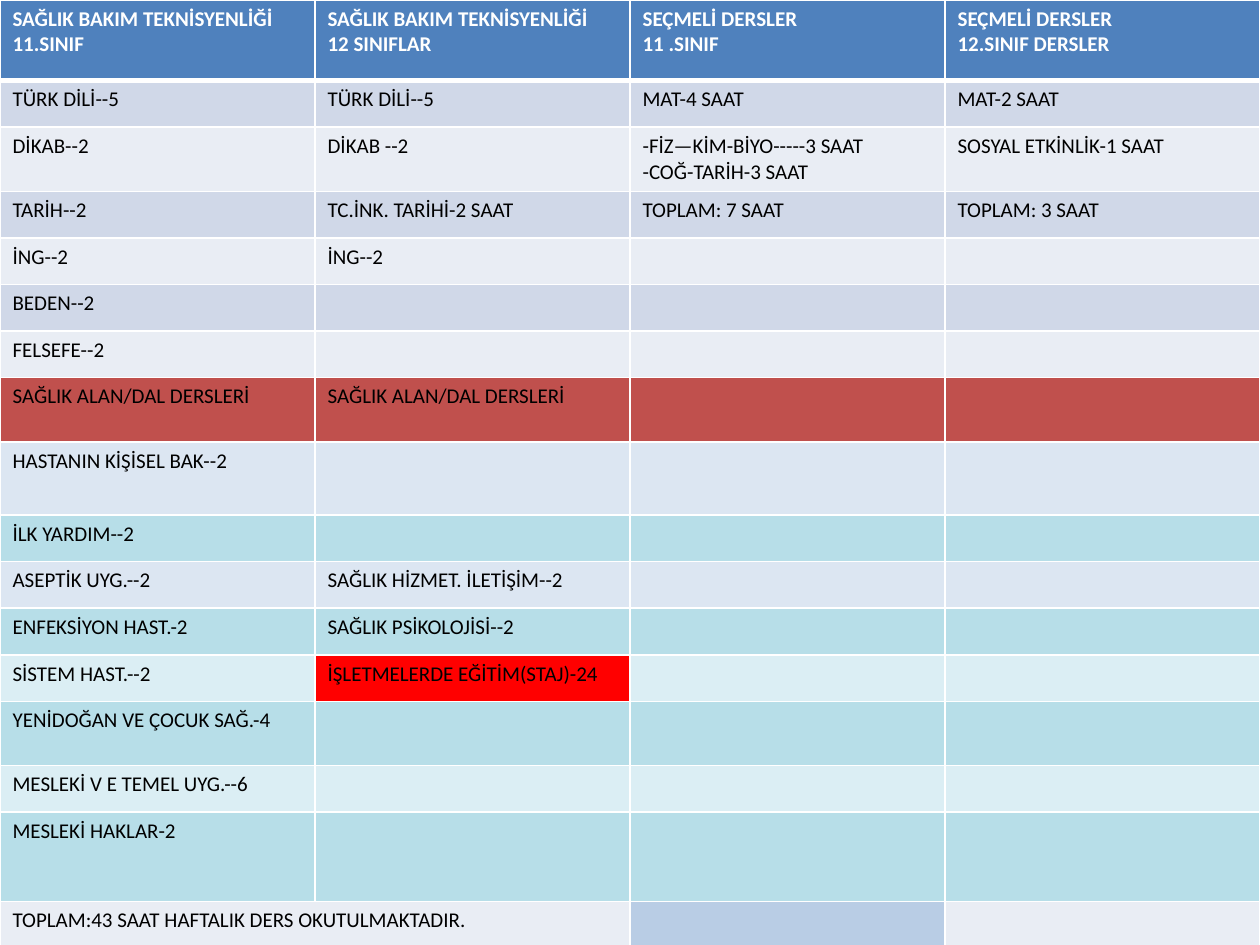
from lxml.etree import SubElement
from pptx import Presentation
from pptx.dml.color import RGBColor
from pptx.oxml.ns import qn
from pptx.util import Inches, Pt

COLORS = {
    "header": "4F81BD", "band": "D0D8E8", "light": "E9EDF4", "section": "C0504D",
    "pale": "DCE6F2", "aqua": "B7DEE8", "pale_aqua": "DBEEF4", "staj": "FF0000",
    "total": "B9CDE5", "white": "FFFFFF", "black": "000000",
}
FONT, SIZE = "Calibri", 12
COLUMNS = 4

# Row height, row fill, texts from the left (missing ones are empty)
ROWS = [
    (0.64, "header", ["SAĞLIK BAKIM TEKNİSYENLİĞİ\n11.SINIF",
                      "SAĞLIK BAKIM TEKNİSYENLİĞİ\n12 SINIFLAR",
                      "SEÇMELİ DERSLER\n11 .SINIF",
                      "SEÇMELİ DERSLER\n12.SINIF DERSLER"]),
    (0.37, "band", ["TÜRK DİLİ--5", "TÜRK DİLİ--5", "MAT-4 SAAT", "MAT-2 SAAT"]),
    (0.51, "light", ["DİKAB--2", "DİKAB --2",
                     "-FİZ—KİM-BİYO-----3 SAAT\n-COĞ-TARİH-3 SAAT",
                     "SOSYAL ETKİNLİK-1 SAAT"]),
    (0.37, "band", ["TARİH--2", "TC.İNK. TARİHİ-2 SAAT",
                    "TOPLAM: 7 SAAT", "TOPLAM: 3 SAAT"]),
    (0.37, "light", ["İNG--2", "İNG--2"]),
    (0.37, "band", ["BEDEN--2"]),
    (0.37, "light", ["FELSEFE--2"]),
    (0.51, "section", ["SAĞLIK ALAN/DAL DERSLERİ", "SAĞLIK ALAN/DAL DERSLERİ"]),
    (0.58, "pale", ["HASTANIN KİŞİSEL BAK--2"]),
    (0.37, "aqua", ["İLK YARDIM--2"]),
    (0.37, "pale", ["ASEPTİK UYG.--2", "SAĞLIK HİZMET. İLETİŞİM--2"]),
    (0.37, "aqua", ["ENFEKSİYON HAST.-2", "SAĞLIK PSİKOLOJİSİ--2"]),
    (0.37, "pale_aqua", ["SİSTEM HAST.--2", "İŞLETMELERDE EĞİTİM(STAJ)-24"]),
    (0.51, "aqua", ["YENİDOĞAN VE ÇOCUK SAĞ.-4"]),
    (0.37, "pale_aqua", ["MESLEKİ V E TEMEL UYG.--6"]),
    (0.71, "aqua", ["MESLEKİ HAKLAR-2"]),
    (0.5, "light", ["TOPLAM:43 SAAT HAFTALIK DERS OKUTULMAKTADIR."]),
]
# Cells whose fill differs from their row: (row, column)
SPECIAL_FILLS = {(12, 1): "staj", (16, 2): "total"}


def rgb(name):
    return RGBColor.from_string(COLORS[name])


def set_borders(cell, bottom):
    tc_pr = cell._tc.get_or_add_tcPr()
    for side, width in (("L", 1), ("R", 1), ("T", 1), ("B", bottom)):
        ln = SubElement(tc_pr, qn(f"a:ln{side}"), w=str(Pt(width)))
        fill = SubElement(ln, qn("a:solidFill"))
        SubElement(fill, qn("a:srgbClr"), val=COLORS["white"])


def write_text(cell, text, is_header):
    cell.text_frame.text = text
    for p in cell.text_frame.paragraphs:
        for r in p.runs:
            r.font.name, r.font.size = FONT, Pt(SIZE)
            r.font.bold = is_header
            r.font.color.rgb = rgb("white" if is_header else "black")
        if not p.runs:  # keeps empty cells from stretching their row
            SubElement(p._p, qn("a:endParaRPr"), sz=str(SIZE * 100))


prs = Presentation()
prs.slide_width, prs.slide_height = Inches(10), Inches(7.5)
s = prs.slides.add_slide(prs.slide_layouts[6])

# Timetable across the full slide width
total_height = sum(height for height, _, _ in ROWS)
table = s.shapes.add_table(len(ROWS), COLUMNS, 0, 0,
                           prs.slide_width, Inches(total_height)).table
for i, (height, row_fill, texts) in enumerate(ROWS):
    table.rows[i].height = Inches(height)
    for j in range(COLUMNS):
        cell = table.cell(i, j)
        set_borders(cell, bottom=3 if i == 0 else 1)
        cell.fill.solid()
        cell.fill.fore_color.rgb = rgb(SPECIAL_FILLS.get((i, j), row_fill))
        write_text(cell, texts[j] if j < len(texts) else "", i == 0)

# The total spans the two class columns
last = len(ROWS) - 1
table.cell(last, 0).merge(table.cell(last, 1))

prs.save("out.pptx")
